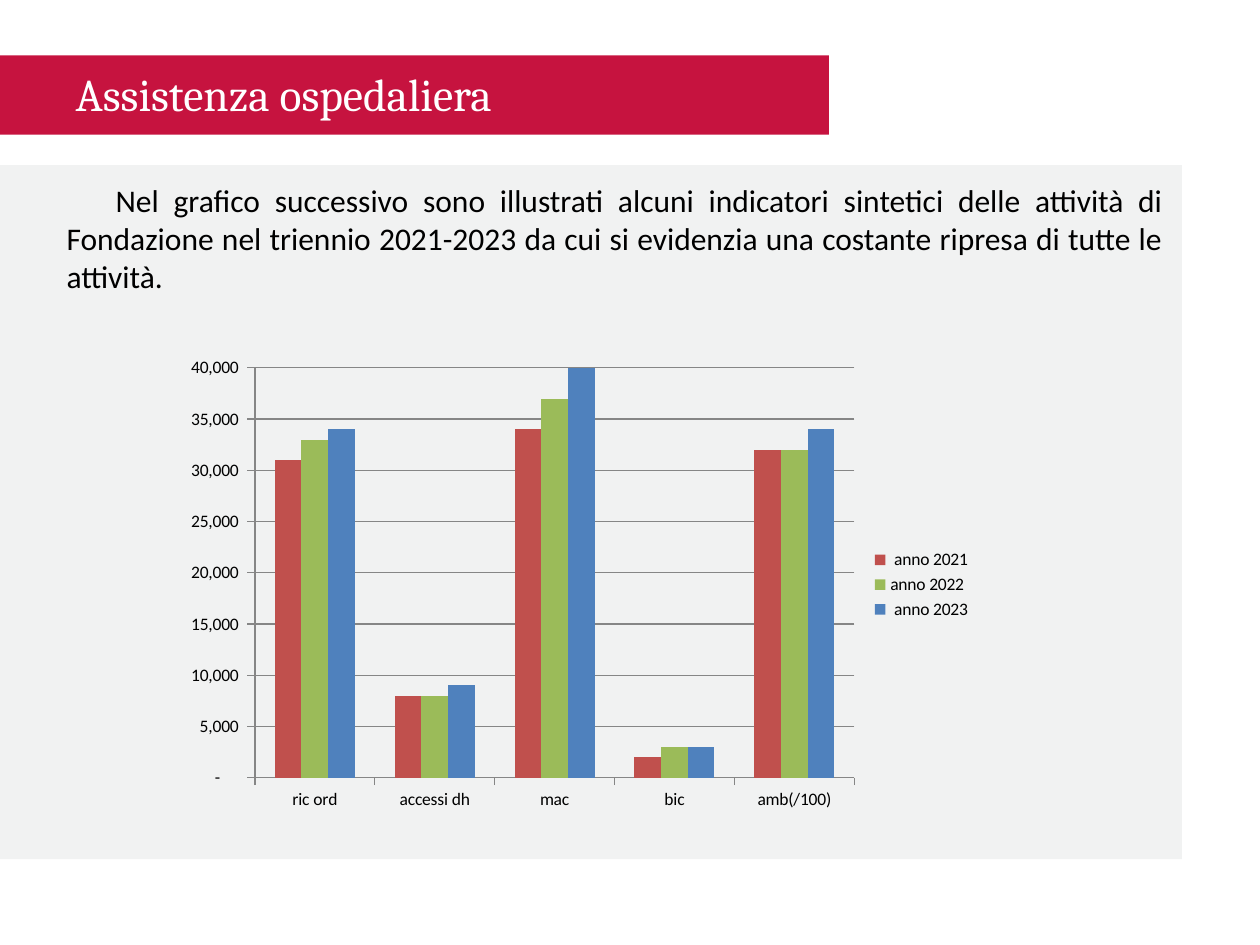
from lxml.etree import SubElement
from pptx import Presentation
from pptx.chart.data import CategoryChartData
from pptx.dml.color import RGBColor
from pptx.enum.chart import XL_CHART_TYPE, XL_LEGEND_POSITION, XL_TICK_MARK
from pptx.enum.shapes import MSO_SHAPE
from pptx.enum.text import MSO_ANCHOR, MSO_AUTO_SIZE, PP_ALIGN
from pptx.oxml.ns import qn
from pptx.util import Inches, Pt

INTRO = (
    "Nel grafico successivo sono illustrati alcuni indicatori sintetici delle attività "
    "di Fondazione nel triennio 2021-2023 da cui si evidenzia una costante ripresa di "
    "tutte le attività."
)
ACTIVITIES = ["ric ord", "accessi dh", "mac", "bic", "amb(/100)"]
YEARS = [
    (" anno 2021", [31000, 8000, 34000, 2000, 32000], "C0504D"),
    ("anno 2022", [33000, 8000, 37000, 3000, 32000], "9BBB59"),
    (" anno 2023", [34000, 9000, 40000, 3000, 34000], "4F81BD"),
]
NUMBER_FORMAT = '_-* #,##0_-;\\-* #,##0_-;_-* "-"??_-;_-@_'
PLOT_AREA = {"x": 0.1, "y": 0.04, "w": 0.74, "h": 0.87}


def color(value):
    return RGBColor.from_string(value)


def set_font(font, name, size, value):
    font.name = name
    font.size = Pt(size)
    font.color.rgb = color(value)


def add_panel(page, left, top, width, height, fill):
    panel = page.shapes.add_shape(
        MSO_SHAPE.RECTANGLE, Inches(left), Inches(top), Inches(width), Inches(height)
    )
    panel.shadow.inherit = False
    panel.fill.solid()
    panel.fill.fore_color.rgb = color(fill)
    panel.line.fill.background()


def place_title(page, text):
    title = page.shapes.title
    title.left, title.top = Inches(0.51), Inches(0.44)
    title.width, title.height = Inches(5.14), Inches(0.43)
    frame = title.text_frame
    frame.text = text
    frame.auto_size = MSO_AUTO_SIZE.NONE
    frame.vertical_anchor = MSO_ANCHOR.TOP
    frame.margin_left = frame.margin_right = Inches(0.09)
    frame.margin_top, frame.margin_bottom = Inches(0.08), Inches(0.04)
    paragraph = frame.paragraphs[0]
    paragraph.alignment = PP_ALIGN.JUSTIFY
    set_font(paragraph.font, "Cambria", 26, "FFFFFF")
    title.element.getparent().append(title.element)


def add_intro(page, text):
    box = page.shapes.add_textbox(Inches(0.43), Inches(1.39), Inches(8.9), Inches(5.28))
    frame = box.text_frame
    frame.word_wrap = True
    frame.text = text
    paragraph = frame.paragraphs[0]
    paragraph.alignment = PP_ALIGN.JUSTIFY
    properties = paragraph._p.get_or_add_pPr()
    properties.set("marL", "0")
    properties.set("indent", str(Inches(0.39)))
    set_font(paragraph.font, "Calibri", 18, "000000")


def set_plot_layout(chart, area):
    plot_area = chart.element.find(".//" + qn("c:plotArea"))
    layout = plot_area.find(qn("c:layout"))
    if layout is None:
        layout = SubElement(plot_area, qn("c:layout"))
        plot_area.insert(0, layout)
    manual = SubElement(layout, qn("c:manualLayout"))
    settings = {"layoutTarget": "inner", "xMode": "edge", "yMode": "edge", **area}
    for name, value in settings.items():
        SubElement(manual, qn("c:" + name)).set("val", str(value))


def style_axis(axis):
    axis.major_tick_mark = XL_TICK_MARK.OUTSIDE
    axis.minor_tick_mark = XL_TICK_MARK.NONE
    axis.format.line.color.rgb = color("868686")
    axis.format.line.width = Pt(0.75)


def add_activity_chart(page):
    data = CategoryChartData(number_format=NUMBER_FORMAT)
    data.categories = ACTIVITIES
    for name, values, _ in YEARS:
        data.add_series(name, values)
    chart = page.shapes.add_chart(
        XL_CHART_TYPE.COLUMN_CLUSTERED,
        Inches(1.38), Inches(2.77), Inches(6.43), Inches(3.74), data,
    ).chart
    set_font(chart.font, "Calibri", 10, "000000")
    chart.has_title = False
    chart.has_legend = True
    chart.legend.position = XL_LEGEND_POSITION.RIGHT
    chart.legend.include_in_layout = False

    plot = chart.plots[0]
    plot.gap_width = 150
    plot.overlap = 0
    plot.vary_by_categories = False
    for series, (_, _, fill) in zip(plot.series, YEARS):
        series.format.fill.solid()
        series.format.fill.fore_color.rgb = color(fill)

    style_axis(chart.category_axis)
    value_axis = chart.value_axis
    style_axis(value_axis)
    value_axis.minimum_scale = 0
    value_axis.maximum_scale = 40000
    value_axis.major_unit = 5000
    value_axis.tick_labels.number_format = NUMBER_FORMAT
    value_axis.tick_labels.number_format_is_linked = False
    value_axis.major_gridlines.format.line.color.rgb = color("868686")
    value_axis.major_gridlines.format.line.width = Pt(0.75)
    set_plot_layout(chart, PLOT_AREA)


def main():
    deck = Presentation()
    deck.slide_width, deck.slide_height = Inches(10), Inches(7.5)
    page = deck.slides.add_slide(deck.slide_layouts[5])
    add_panel(page, 0, 1.31, 9.38, 5.51, "F1F2F2")
    add_panel(page, -0.05, 0.44, 6.63, 0.63, "C6133F")
    place_title(page, "Assistenza ospedaliera")
    add_intro(page, INTRO)
    add_activity_chart(page)
    deck.save("out.pptx")


if __name__ == "__main__":
    main()
